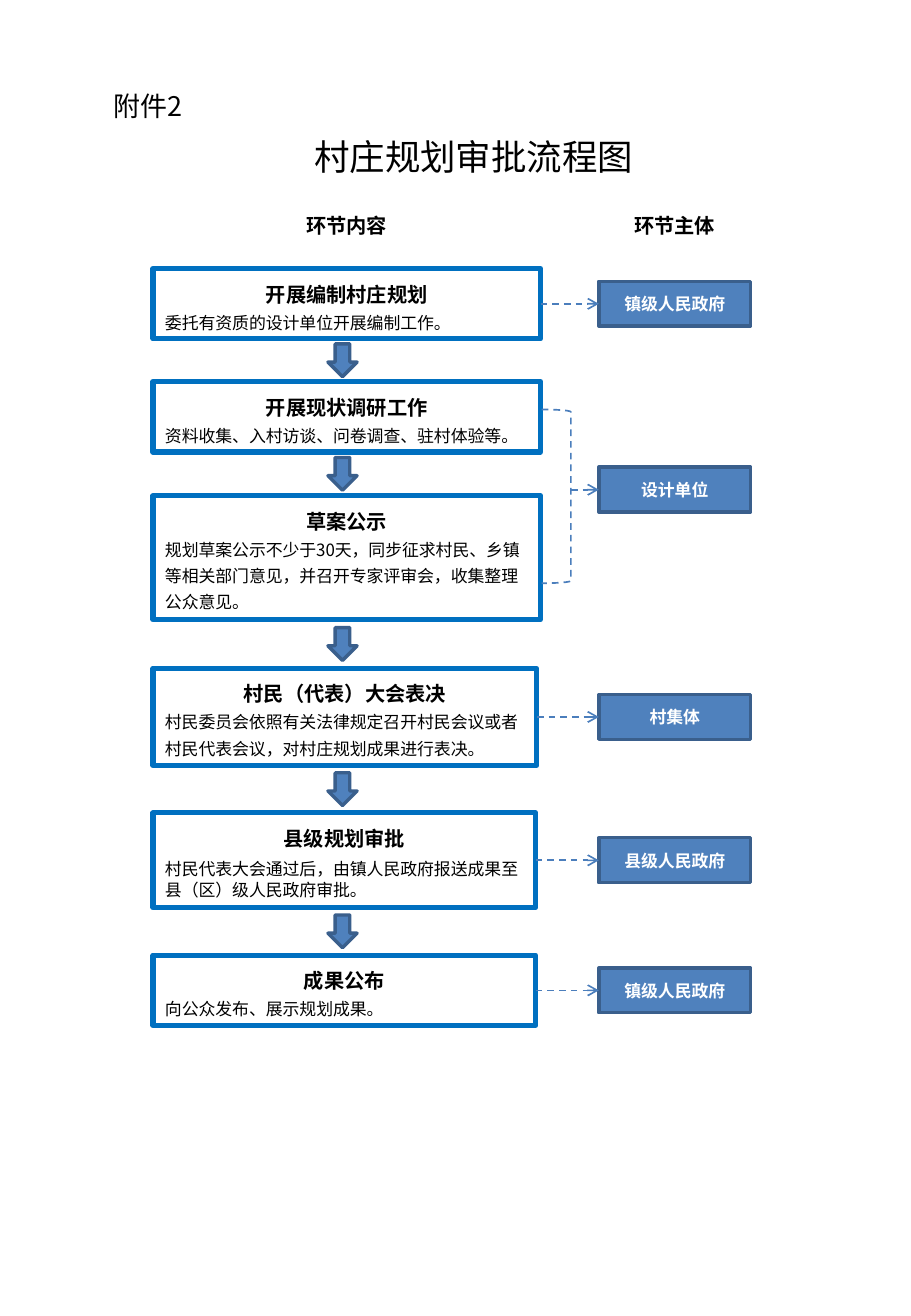
from lxml import etree
from pptx import Presentation
from pptx import util as u
from pptx.dml.color import RGBColor
from pptx.enum import dml, shapes, text
from pptx.oxml.ns import qn

ATTACHMENT = "附件2"
TITLE = "村庄规划审批流程图"
STEP_HEADING, OWNER_HEADING = "环节内容", "环节主体"
# top, width, height, name, detail, owner (None: shared through the bracket)
STEPS = [
    (2.21, 3.19, 0.58, "开展编制村庄规划", "委托有资质的设计单位开展编制工作。", "镇级人民政府"),
    (3.14, 3.19, 0.58, "开展现状调研工作", "资料收集、入村访谈、问卷调查、驻村体验等。", None),
    (4.08, 3.19, 1.02, "草案公示",
     "规划草案公示不少于30天，同步征求村民、乡镇等相关部门意见，并召开专家评审会，收集整理公众意见。", None),
    (5.5, 3.16, 0.8, "村民（代表）大会表决",
     "村民委员会依照有关法律规定召开村民会议或者村民代表会议，对村庄规划成果进行表决。", "村集体"),
    (6.69, 3.15, 0.78, "县级规划审批",
     "村民代表大会通过后，由镇人民政府报送成果至县（区）级人民政府审批。", "县级人民政府"),
    (7.86, 3.15, 0.58, "成果公布", "向公众发布、展示规划成果。", "镇级人民政府"),
]
COMPACT_STEP = "县级规划审批"
SHARED_OWNER, SHARED_MIDDLE = "设计单位", 4.03
BRACKET = (4.46, 3.37, 0.24, 1.43)

PAGE_W, PAGE_H = 7.5, 10.83
STEP_LEFT, STEP_W = 1.26, 3.19
OWNER_LEFT, OWNER_W, OWNER_H = 4.93, 1.25, 0.37
ARROW_LEFT, ARROW_W, ARROW_H = 2.7, 0.24, 0.27
HEADING_TOP, HEADING_H = 1.71, 0.3

FONT = "Noto Sans CJK SC"
LINE_HEIGHT, LOOSE = 1.2, 1.3
BLACK = RGBColor(0x00, 0x00, 0x00)
WHITE = RGBColor(0xFF, 0xFF, 0xFF)
FRAME = RGBColor(0x00, 0x70, 0xC0)
FILL = RGBColor(0x4F, 0x81, 0xBD)
EDGE = RGBColor(0x3A, 0x5F, 0x8C)
LINK = RGBColor(0x4B, 0x7E, 0xBC)

MSO = shapes.MSO_SHAPE
LEFT, CENTER = text.PP_ALIGN.LEFT, text.PP_ALIGN.CENTER

deck = Presentation()
deck.slide_width, deck.slide_height = u.Inches(PAGE_W), u.Inches(PAGE_H)
page = deck.slides.add_slide(deck.slide_layouts[6])


def write(para, words, size, color=BLACK, bold=False, align=LEFT, spacing=1, before=0):
    para.alignment = align
    para.line_spacing = u.Pt(round(size * LINE_HEIGHT * spacing, 1))
    para.space_before = u.Pt(before)
    span = para.add_run()
    span.text = words
    font = span.font
    font.name, font.size, font.bold = FONT, u.Pt(size), bold
    font.color.rgb = color
    east_asian = etree.SubElement(font._element, qn("a:ea"))
    east_asian.set("typeface", FONT)


def add_label(place, words, size, **style):
    box = page.shapes.add_textbox(*map(u.Inches, place))
    box.text_frame.word_wrap = True
    write(box.text_frame.paragraphs[0], words, size, **style)


def add_block(kind, place, edge, width, fill=None):
    block = page.shapes.add_shape(kind, *map(u.Inches, place))
    block.shadow.inherit = False
    if fill is None:
        block.fill.background()
    else:
        block.fill.solid()
        block.fill.fore_color.rgb = fill
    block.line.color.rgb, block.line.width = edge, u.Pt(width)
    return block


def add_step(top, width, height, name, detail):
    step = add_block(MSO.RECTANGLE, (STEP_LEFT, top, width, height), FRAME, 3)
    frame = step.text_frame
    frame.word_wrap = True
    frame.vertical_anchor = text.MSO_ANCHOR.TOP
    write(frame.paragraphs[0], name, 12, bold=True, align=CENTER, spacing=LOOSE)
    compact = name == COMPACT_STEP
    write(frame.add_paragraph(), detail, 10,
          spacing=1 if compact else LOOSE, before=5 if compact else 0)
    return step


def add_owner(middle, name):
    place = (OWNER_LEFT, middle - OWNER_H / 2, OWNER_W, OWNER_H)
    owner = add_block(MSO.RECTANGLE, place, EDGE, 2, FILL)
    owner.text_frame.vertical_anchor = text.MSO_ANCHOR.MIDDLE
    write(owner.text_frame.paragraphs[0], name, 10, color=WHITE, bold=True, align=CENTER)
    return owner


def add_link(start_x, middle, owner, step=None):
    """Dashed arrow ending at the left side of an owner box."""
    y = u.Inches(middle)
    link = page.shapes.add_connector(
        shapes.MSO_CONNECTOR.STRAIGHT, u.Inches(start_x), y, owner.left, y)
    if step is not None:
        link.begin_connect(step, 3)
    link.end_connect(owner, 1)
    link.line.color.rgb, link.line.width = LINK, u.Pt(1)
    link.line.dash_style = dml.MSO_LINE.DASH
    etree.SubElement(link.line._get_or_add_ln(), qn("a:tailEnd")).set("type", "arrow")
    etree.SubElement(link._element.spPr, qn("a:effectLst"))


add_label((0.84, 0.69, 0.96, 0.37), ATTACHMENT, 16)
add_label((0.9, 1.06, 6, 0.45), TITLE, 21, align=CENTER)
for left, width, heading in ((STEP_LEFT, STEP_W, STEP_HEADING),
                             (OWNER_LEFT, OWNER_W, OWNER_HEADING)):
    add_label((left, HEADING_TOP, width, HEADING_H), heading, 12, bold=True, align=CENTER)

for top, width, height, name, detail, owner_name in STEPS:
    step = add_step(top, width, height, name, detail)
    if owner_name:
        middle = top + height / 2
        add_link(STEP_LEFT + width, middle, add_owner(middle, owner_name), step)

for upper, lower in zip(STEPS, STEPS[1:]):
    gap_middle = (upper[0] + upper[2] + lower[0]) / 2
    add_block(MSO.DOWN_ARROW, (ARROW_LEFT, gap_middle - ARROW_H / 2, ARROW_W, ARROW_H),
              EDGE, 2, FILL)

bracket = add_block(MSO.RIGHT_BRACKET, BRACKET, LINK, 1)
bracket.line.dash_style = dml.MSO_LINE.DASH
add_link(BRACKET[0] + BRACKET[2], SHARED_MIDDLE, add_owner(SHARED_MIDDLE, SHARED_OWNER))

deck.save("out.pptx")
